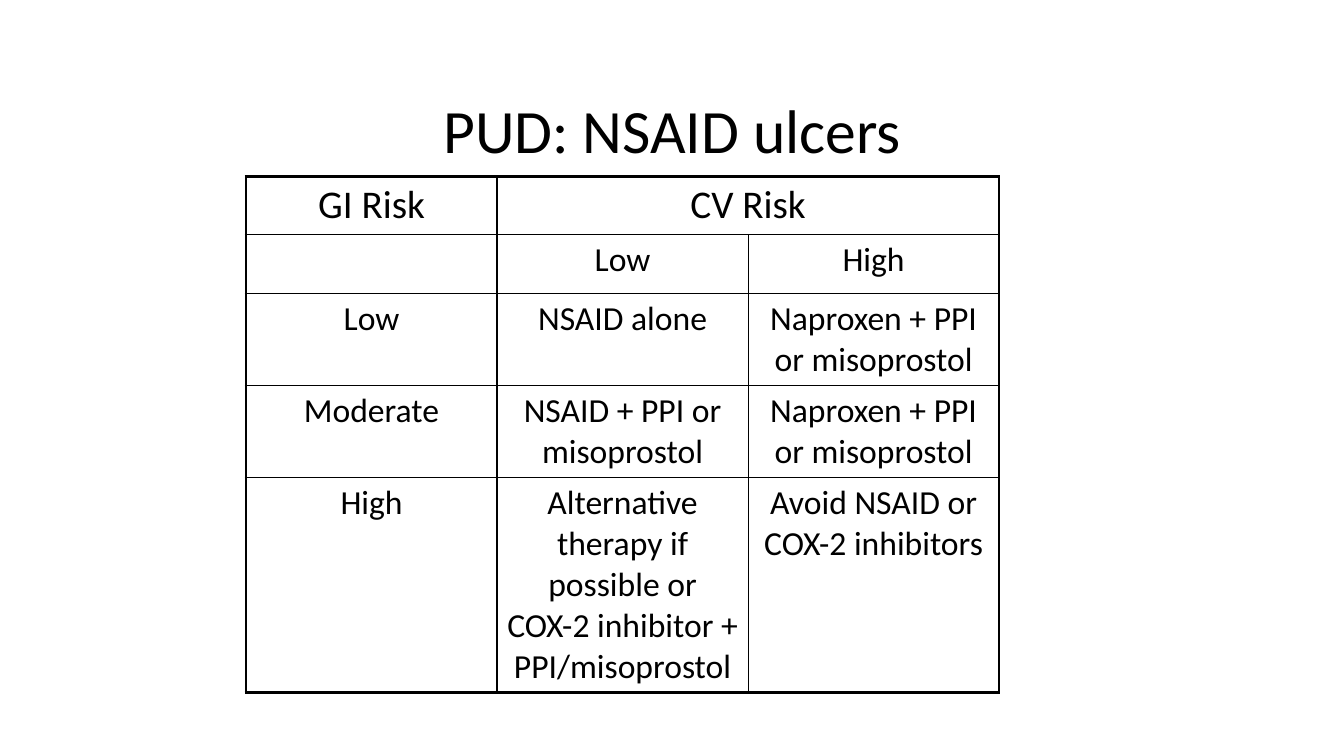
"""Build the slide on NSAID ulcer therapy by GI and CV risk."""
from pptx import Presentation
from pptx.dml.color import RGBColor
from pptx.enum.text import MSO_ANCHOR as ANCHOR, PP_ALIGN as ALIGN
from pptx.oxml.ns import qn
from pptx.util import Pt
from lxml.etree import SubElement

PX = 9144
BLACK = RGBColor(0x00, 0x00, 0x00)
FONT = "Calibri"
THIN, THICK = 1, 2.25
COL_WIDTH = 249
ROW_HEIGHTS = [58, 58, 91, 91, 213]
RISK_ROWS = [
    ["GI Risk", "CV Risk", ""],
    ["", "Low", "High"],
    ["Low", "NSAID alone", "Naproxen + PPI or misoprostol"],
    ["Moderate", "NSAID + PPI or misoprostol", "Naproxen + PPI or misoprostol"],
    ["High",
     "Alternative therapy if possible or COX-2 inhibitor + PPI/misoprostol",
     "Avoid NSAID or COX-2 inhibitors"],
]


def px(*lengths):
    """Turn px lengths into a list of EMU."""
    return [n * PX for n in lengths]


def put_text(tf, text, size=24, color=BLACK, align=ALIGN.CENTER):
    """Write one formatted paragraph into a text frame."""
    p = tf.paragraphs[0]
    p.alignment = align
    r = p.add_run()
    r.text = text
    r.font.name, r.font.size = FONT, Pt(size)
    r.font.color.rgb = color


def add_title(s, text, box):
    """Place and format the title placeholder."""
    sp = s.shapes.title
    sp.left, sp.top, sp.width, sp.height = px(*box)
    tf = sp.text_frame
    tf.vertical_anchor = ANCHOR.MIDDLE
    put_text(tf, text, size=44)


def set_borders(cell, **widths):
    """Draw the cell borders, keyed by side, at widths in points."""
    tc_pr = cell._tc.get_or_add_tcPr()
    for side, width in widths.items():
        ln = SubElement(tc_pr, qn(f"a:ln{side}"), w=str(Pt(width)))
        fill = SubElement(ln, qn("a:solidFill"))
        SubElement(fill, qn("a:srgbClr"), val=str(BLACK))


def add_risk_table(s, left, top):
    """Add the risk grid with a thick outline and thin inner lines."""
    last_row, last_col = len(RISK_ROWS) - 1, len(RISK_ROWS[0]) - 1
    width = COL_WIDTH * (last_col + 1)
    table = s.shapes.add_table(last_row + 1, last_col + 1,
                               *px(left, top, width, sum(ROW_HEIGHTS))).table
    table.first_row = table.horz_banding = False
    for col in table.columns:
        col.width = COL_WIDTH * PX
    for row, height in zip(table.rows, ROW_HEIGHTS):
        row.height = height * PX
    table.cell(0, 1).merge(table.cell(0, 2))
    for i, texts in enumerate(RISK_ROWS):
        for j, text in enumerate(texts):
            cell = table.cell(i, j)
            right_col = j + cell.span_width - 1
            set_borders(cell,
                        L=THICK if j == 0 else THIN,
                        R=THICK if right_col >= last_col else THIN,
                        T=THICK if i == 0 else THIN,
                        B=THICK if i == last_row else THIN)
            cell.fill.background()
            if text:
                put_text(cell.text_frame, text, size=24 if i else 28)


def main():
    """Build and save the slide."""
    prs = Presentation()
    prs.slide_width, prs.slide_height = px(1333, 750)
    s = prs.slides.add_slide(prs.slide_layouts[5])
    add_title(s, "PUD: NSAID ulcers", (217, 65, 900, 125))
    add_risk_table(s, 244, 175)
    prs.save("out.pptx")


if __name__ == "__main__":
    main()
